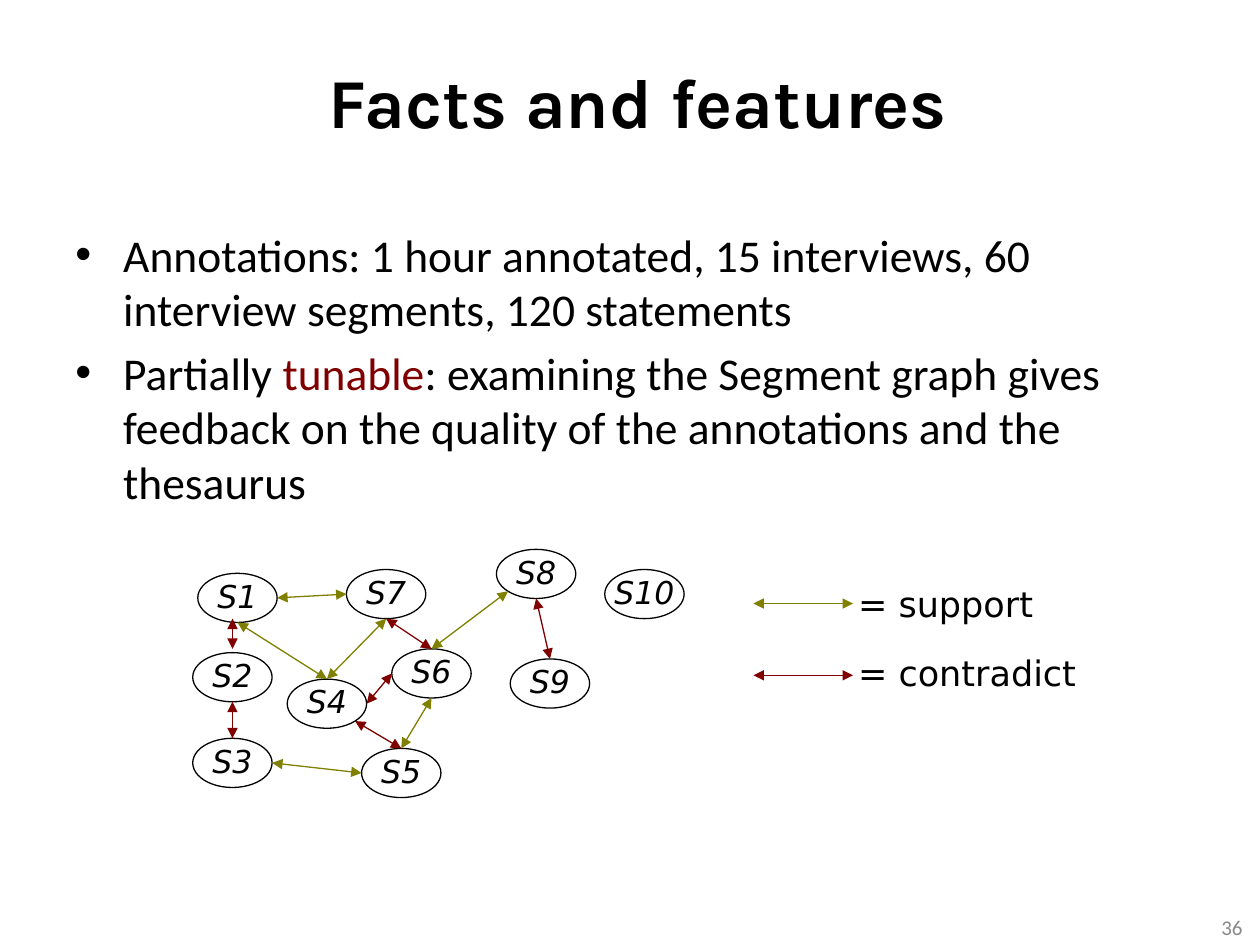
from math import cos, radians, sin

from lxml import etree
from pptx import Presentation
from pptx.dml.color import RGBColor
from pptx.enum.shapes import MSO_CONNECTOR as Connector, MSO_SHAPE as Shape
from pptx.enum.text import MSO_ANCHOR as Anchor, PP_ALIGN as Align
from pptx.oxml.ns import qn
from pptx.util import Inches, Pt

BLACK, GRAY, SUPPORT, CONTRADICT = "000000", "898989", "808000", "800000"
LINE_WIDTH = Pt(0.75)

TITLE = {"name": "Karla", "size": Pt(40), "bold": True}
BODY = {"name": "Calibri", "size": Pt(26)}
NUMBER = {"name": "Calibri", "size": Pt(12)}
NODE = {"name": "DejaVu Sans", "size": Pt(18), "italic": True}
LEGEND = {"name": "DejaVu Sans", "size": Pt(20)}

BULLETS = [
    [("Annotations: 1 hour annotated, 15 interviews, 60 interview segments, "
      "120 statements", BLACK)],
    [("Partially ", BLACK), ("tunable", CONTRADICT),
     (": examining the Segment graph gives feedback on the quality of the "
      "annotations and the thesaurus", BLACK)],
]

# Left and top of each node, relative to the graph's box
NODE_WIDTH, NODE_HEIGHT = 0.63, 0.39
NODES = {
    "S1": (0.04, 0.19), "S2": (0, 0.82), "S3": (0, 1.5), "S4": (0.75, 1.03),
    "S5": (1.34, 1.58), "S6": (1.58, 0.79), "S7": (1.22, 0.16),
    "S8": (2.41, 0), "S9": (2.52, 0.87), "S10": (3.27, 0.16),
}
# Angles on the node outline, clockwise from the right
RIGHT, LOWER_RIGHT, BOTTOM, LOWER_LEFT, LEFT, TOP = 0, 45, 90, 135, 180, 270
EDGES = [
    ("S1", BOTTOM, "S4", TOP, SUPPORT),
    ("S1", RIGHT, "S7", LEFT, SUPPORT),
    ("S6", LEFT, "S4", RIGHT, CONTRADICT),
    ("S7", BOTTOM, "S6", TOP, CONTRADICT),
    ("S2", BOTTOM, "S3", TOP, CONTRADICT),
    ("S4", TOP, "S7", BOTTOM, SUPPORT),
    ("S4", LOWER_RIGHT, "S5", TOP, CONTRADICT),
    ("S3", RIGHT, "S5", LEFT, SUPPORT),
    ("S6", TOP, "S8", LOWER_LEFT, SUPPORT),
    ("S6", BOTTOM, "S5", TOP, SUPPORT),
    ("S8", BOTTOM, "S9", TOP, CONTRADICT),
]


def rgb(color):
    return RGBColor.from_string(color)


def add_run(paragraph, text, font_format, color=BLACK):
    run = paragraph.add_run()
    run.text = text
    for name, value in font_format.items():
        setattr(run.font, name, value)
    run.font.color.rgb = rgb(color)


def add_text_box(slide, left, top, width, height, **frame_format):
    box = slide.shapes.add_textbox(*map(Inches, (left, top, width, height)))
    frame = box.text_frame
    for name, value in {"word_wrap": True, **frame_format}.items():
        setattr(frame, name, value)
    return frame


def add_label(slide, box, text, font_format, align, color=BLACK, **frame_format):
    """Add a one-line text box, centred vertically."""
    frame = add_text_box(slide, *box, vertical_anchor=Anchor.MIDDLE, **frame_format)
    paragraph = frame.paragraphs[0]
    paragraph.alignment = align
    add_run(paragraph, text, font_format, color)


def add_bullets(slide, left, top, width, height):
    frame = add_text_box(slide, left, top, width, height)
    for index, runs in enumerate(BULLETS):
        paragraph = frame.add_paragraph() if index else frame.paragraphs[0]
        properties = paragraph._p.get_or_add_pPr()
        properties.set("marL", str(Inches(0.38)))
        properties.set("indent", str(-Inches(0.38)))
        etree.SubElement(properties, qn("a:buFont")).set("typeface", "Arial")
        etree.SubElement(properties, qn("a:buChar")).set("char", "•")
        if index:
            paragraph.space_before = Pt(5.2)
        for text, color in runs:
            add_run(paragraph, text, BODY, color)


def add_arrow(slide, start, end, color):
    """Add a line with an arrowhead at both ends."""
    arrow = slide.shapes.add_connector(
        Connector.STRAIGHT, *map(Inches, (*start, *end)))
    arrow.line.color.rgb = rgb(color)
    arrow.line.width = LINE_WIDTH
    line = arrow.line._get_or_add_ln()
    for tag in ("a:headEnd", "a:tailEnd"):
        etree.SubElement(line, qn(tag)).set("type", "triangle")
    etree.SubElement(arrow._element.spPr, qn("a:effectLst"))


def add_node(slide, text, left, top):
    node = slide.shapes.add_shape(
        Shape.OVAL, *map(Inches, (left, top, NODE_WIDTH, NODE_HEIGHT)))
    node.shadow.inherit = False
    node.fill.background()
    node.line.color.rgb = rgb(BLACK)
    node.line.width = LINE_WIDTH
    frame = node.text_frame
    frame_format = {"word_wrap": False, "vertical_anchor": Anchor.MIDDLE,
                    "margin_left": 0, "margin_right": 0,
                    "margin_top": 0, "margin_bottom": 0}
    for name, value in frame_format.items():
        setattr(frame, name, value)
    paragraph = frame.paragraphs[0]
    paragraph.alignment = Align.CENTER
    paragraph.line_spacing = 0.9
    add_run(paragraph, text, NODE)


def add_graph(slide, left, top):
    for text, (x, y) in NODES.items():
        add_node(slide, text, left + x, top + y)

    def outline_point(node, angle):
        x, y = NODES[node]
        return (left + x + NODE_WIDTH / 2 * (1 + cos(radians(angle))),
                top + y + NODE_HEIGHT / 2 * (1 + sin(radians(angle))))

    for first, first_angle, second, second_angle, color in EDGES:
        add_arrow(slide, outline_point(first, first_angle),
                  outline_point(second, second_angle), color)
    # The arrow from S1 to S2 stands upright above the middle of S2
    middle = left + NODE_WIDTH / 2
    add_arrow(slide, (middle, top + 0.55), (middle, top + 0.79), CONTRADICT)


def add_legend(slide, left, top):
    entries = [("= support", SUPPORT), ("= contradict", CONTRADICT)]
    for index, (text, color) in enumerate(entries):
        y = top + 0.2 + 0.57 * index
        add_arrow(slide, (left, y), (left + 0.79, y), color)
        add_label(slide, (left + 0.83, top + 0.55 * index, 2.28, 0.4), text,
                  LEGEND, Align.LEFT, margin_left=0)


def main():
    presentation = Presentation()
    presentation.slide_width, presentation.slide_height = Inches(10), Inches(7.5)
    slide = presentation.slides.add_slide(presentation.slide_layouts[6])
    add_label(slide, (0.56, 0.17, 9, 1.25), "Facts and features", TITLE, Align.CENTER)
    add_bullets(slide, 0.5, 1.75, 9, 4.95)
    add_label(slide, (7.63, 7.16, 2.33, 0.4), "36", NUMBER, Align.RIGHT, GRAY)
    add_graph(slide, 1.53, 4.36)
    add_legend(slide, 5.98, 4.59)
    presentation.save("out.pptx")


if __name__ == "__main__":
    main()
